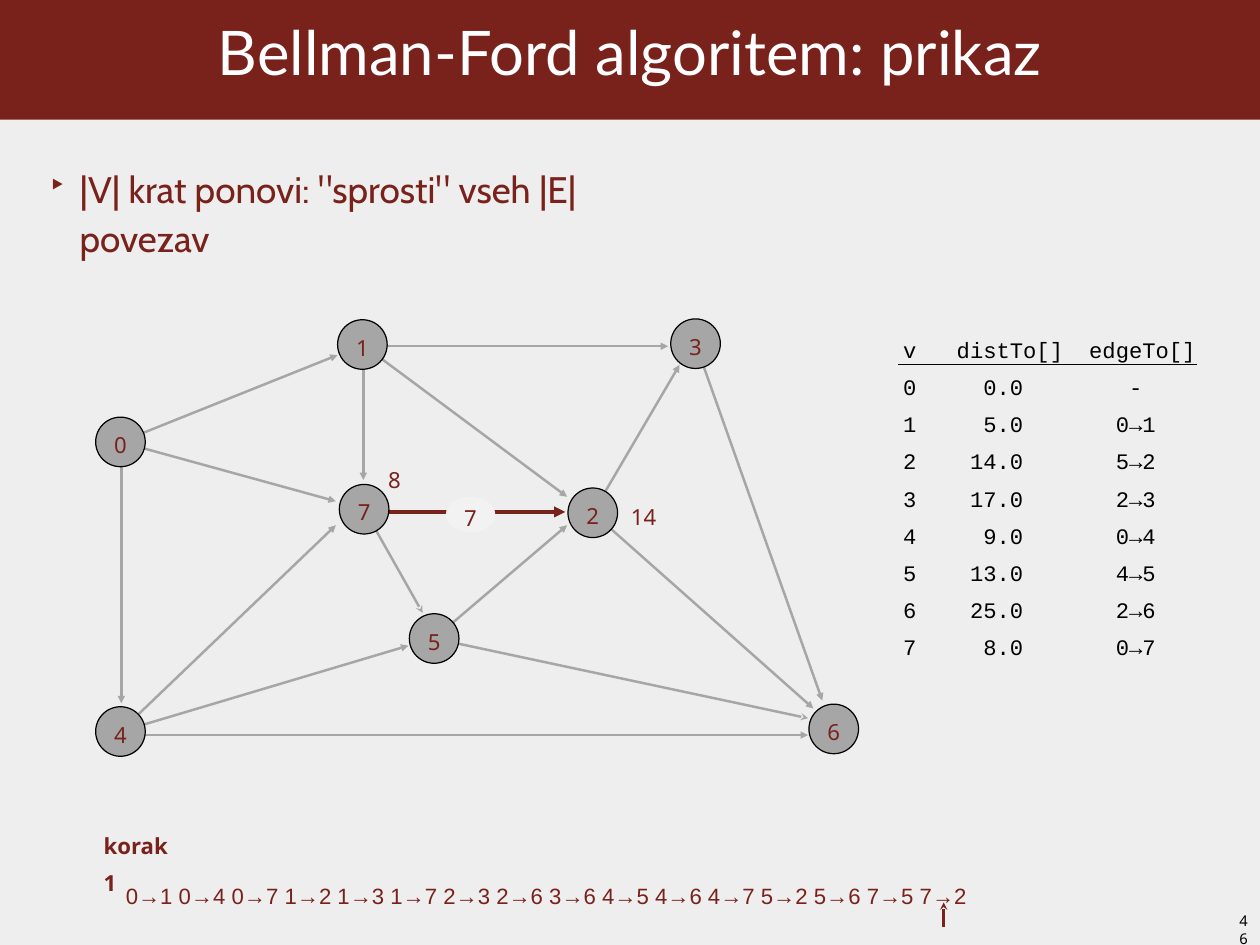
from lxml import etree
from pptx import Presentation
from pptx.dml.color import RGBColor
from pptx.enum.shapes import MSO_CONNECTOR, MSO_SHAPE
from pptx.enum.text import MSO_ANCHOR, PP_ALIGN
from pptx.oxml.ns import qn
from pptx.util import Pt

STRAIGHT = MSO_CONNECTOR.STRAIGHT
RECTANGLE, OVAL = MSO_SHAPE.RECTANGLE, MSO_SHAPE.OVAL
TOP, MIDDLE = MSO_ANCHOR.TOP, MSO_ANCHOR.MIDDLE
LEFT, CENTER, RIGHT = PP_ALIGN.LEFT, PP_ALIGN.CENTER, PP_ALIGN.RIGHT

NO_GRID_STYLE = "{2D5ABB26-0587-4C30-8999-92F81FD0307C}"
MAROON, GRAY, BLACK = "79211B", "A6A6A6", "000000"
PAPER, WHITE, PALE = "EEEEEE", "FFFFFF", "F2F2F2"

VERTICES = {
    "0": (97.9, 359.3), "1": (294.5, 280.1), "2": (481.7, 416.9), "3": (565.2, 279.4),
    "4": (97.9, 594.7), "5": (352.8, 519.1), "6": (677.5, 592.6), "7": (295.9, 414),
}
EDGE_TIPS = {
    "0→1": (274.3, 288.7), "0→4": (98.6, 571.7), "0→7": (272.9, 407.5),
    "1→2": (460.8, 403.9), "1→3": (542.9, 281.5), "1→7": (295.2, 390.2),
    "2→3": (552.2, 296.6), "2→6": (661, 576), "3→6": (668.2, 569.5),
    "4→5": (331.9, 524.9), "4→6": (656.6, 597.6), "4→7": (272.9, 427),
    "5→2": (460.8, 427), "5→6": (656.6, 583.9), "7→5": (343.4, 498.2),
    "7→2": (459.4, 416.2),
}
RELAXED_EDGE = "7→2"
OPEN_TIPS = ("5→6", "7→5")
DISTANCES = [
    ("v", "distTo[]", "edgeTo[]"),
    ("0", "0.0", "-"), ("1", "5.0", "0→1"), ("2", "14.0", "5→2"),
    ("3", "17.0", "2→3"), ("4", "9.0", "0→4"), ("5", "13.0", "4→5"),
    ("6", "25.0", "2→6"), ("7", "8.0", "0→7"),
]


def color(hex_code):
    return RGBColor.from_string(hex_code)


def level_start(center, tip, tolerance=3):
    return tuple(t if abs(t - c) < tolerance else c for c, t in zip(center, tip))


def write(frame, text, font="Noto Sans", size=18, ink=MAROON, bold=False, align=LEFT,
          spacing=1.0, indent=0, hanging=0, bullet=None):
    paragraph = frame.paragraphs[0]
    paragraph.alignment = align
    paragraph.line_spacing = spacing
    properties = paragraph._p.get_or_add_pPr()
    properties.set("marL", str(Pt(indent)))
    properties.set("indent", str(Pt(-hanging)))
    if bullet:
        etree.SubElement(properties, qn("a:buSzPct")).set("val", "80000")
        etree.SubElement(properties, qn("a:buChar")).set("char", bullet)
    run = paragraph.add_run()
    run.text = text
    run.font.name = font
    run.font.size = Pt(size)
    run.font.bold = bold
    run.font.color.rgb = color(ink)


class Board:
    def __init__(self, slide, background):
        self.slide = slide
        self.shapes = slide.shapes
        slide.background.fill.solid()
        slide.background.fill.fore_color.rgb = color(background)

    def prepare(self, frame, insets, anchor):
        frame.word_wrap = True
        frame.vertical_anchor = anchor
        (frame.margin_left, frame.margin_top,
         frame.margin_right, frame.margin_bottom) = map(Pt, insets)

    def text(self, box, text, insets=(0, 0, 4.3, 0), anchor=TOP, **style):
        frame = self.shapes.add_textbox(*map(Pt, box)).text_frame
        self.prepare(frame, insets, anchor)
        write(frame, text, **style)

    def shape(self, kind, box, text, fill, outline=None, insets=(0, 0, 0.7, 0), **style):
        shape = self.shapes.add_shape(kind, *map(Pt, box))
        shape.shadow.inherit = False
        shape.fill.solid()
        shape.fill.fore_color.rgb = color(fill)
        if outline:
            shape.line.color.rgb = color(outline)
            shape.line.width = Pt(1)
        else:
            shape.line.fill.background()
        self.prepare(shape.text_frame, insets, MIDDLE)
        write(shape.text_frame, text, align=CENTER, **style)

    def line(self, start, end, ink, width, tip=None):
        line = self.shapes.add_connector(STRAIGHT, *map(Pt, (*start, *end)))
        line.line.color.rgb = color(ink)
        line.line.width = Pt(width)
        if tip:
            etree.SubElement(line.line._get_or_add_ln(), qn("a:tailEnd")).set("type", tip)
        etree.SubElement(line._element.spPr, qn("a:effectLst"))

    def table(self, left, top, widths, row_height, rows, aligns, body_insets):
        size = (sum(widths), row_height * len(rows))
        table = self.shapes.add_table(
            len(rows), len(widths), *map(Pt, (left, top, *size))).table
        table._tbl.tblPr.find(qn("a:tableStyleId")).text = NO_GRID_STYLE
        table.first_row = table.horz_banding = False
        for column, width in zip(table.columns, widths):
            column.width = Pt(width)
        for r, values in enumerate(rows):
            table.rows[r].height = Pt(row_height)
            for c, value in enumerate(values):
                cell = table.cell(r, c)
                cell.fill.background()
                cell.vertical_anchor = MIDDLE
                cell.margin_left = cell.margin_top = cell.margin_bottom = 0
                cell.margin_right = Pt(body_insets[c] if r else 0)
                write(cell.text_frame, value, font="Courier New", ink=BLACK, align=aligns[c])


def main():
    deck = Presentation()
    deck.slide_width, deck.slide_height = Pt(1023.84), Pt(768.24)
    board = Board(deck.slides.add_slide(deck.slide_layouts[6]), PAPER)

    board.shape(RECTANGLE, (0, 0, 1028.2, 97.2), "Bellman-Ford algoritem: prikaz", MAROON,
                insets=(4.3, 4.3, 8.6, 4.3), font="Lato", size=50, ink=WHITE, spacing=0.7)
    board.text((30.2, 134.6, 491.8, 73.4), '|V| krat ponovi: "sprosti" vseh |E| povezav',
               insets=(4.3, 4.3, 8.6, 4.3), anchor=MIDDLE, font="Cabin", size=30,
               spacing=1.1, indent=30.2, hanging=25.2, bullet="‣")
    board.text((1000, 738, 24.5, 23), "46", insets=(7.2, 3.6, 7.2, 3.6), size=12, ink=BLACK)

    for edge, tip in EDGE_TIPS.items():
        relaxed = edge == RELAXED_EDGE
        board.line(level_start(VERTICES[edge[0]], tip), tip,
                   MAROON if relaxed else GRAY, 3 if relaxed else 2,
                   "stealth" if edge in OPEN_TIPS else "triangle")

    diameter = 40.3
    for vertex, (x, y) in VERTICES.items():
        board.shape(OVAL, (x - diameter / 2, y - diameter / 2, diameter, diameter),
                    vertex, GRAY, BLACK, spacing=1.2, indent=0.7)
    board.shape(OVAL, (362.2, 403.9, 40.3, 28.8), "7", PALE, spacing=1.2, indent=0.7)
    board.text((311, 370.8, 25.2, 28.8), "8", spacing=1.4, indent=4.3)
    board.text((508.3, 401, 36.7, 28.8), "14", spacing=1.4, indent=4.3)

    board.table(733.8, 271.6, (24, 106, 129), 30.2, DISTANCES,
                (LEFT, RIGHT, CENTER), (0, 32.4, 10.8))
    board.line((729.4, 296.5), (972.7, 296.5), BLACK, 1)

    board.text((79.9, 668.2, 72.7, 27.4), "korak 1", bold=True, spacing=1.4, indent=4.3)
    board.text((97.9, 706.3, 825.8, 28.1), " ".join(EDGE_TIPS), font="Arial",
               spacing=1.5, indent=4.3)
    board.line((766.8, 753.8), (766.8, 733.7), MAROON, 2, "stealth")

    deck.save("out.pptx")


if __name__ == "__main__":
    main()
